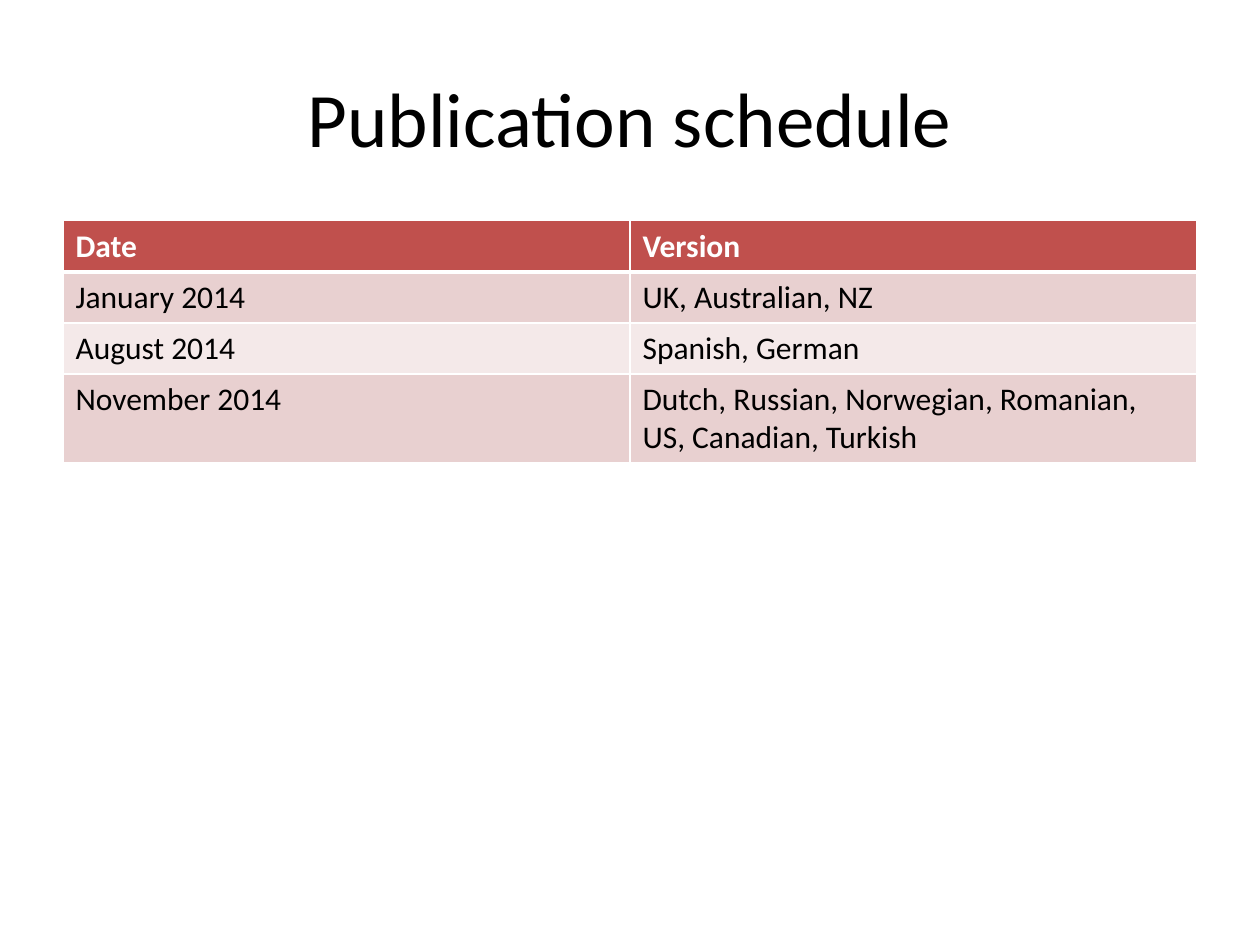
from dataclasses import dataclass

from lxml.etree import SubElement
from pptx import Presentation
from pptx.dml.color import RGBColor
from pptx.enum.text import MSO_ANCHOR, PP_ALIGN
from pptx.oxml.ns import qn
from pptx.util import Cm, Pt


@dataclass(frozen=True)
class Theme:
    """Colours, font and type sizes of the slide."""
    font: str = "Calibri"
    ink: str = "000000"
    paper: str = "FFFFFF"
    head: str = "C0504D"
    bands: tuple = ("E8D0D0", "F4E9E9")
    title: int = 44
    body: int = 18
    thin: int = 1
    thick: int = 3


THEME = Theme()
ROWS = [
    ("Date", "Version"),
    ("January 2014", "UK, Australian, NZ"),
    ("August 2014", "Spanish, German"),
    ("November 2014",
     "Dutch, Russian, Norwegian, Romanian, US, Canadian, Turkish"),
]


def add_run(para, text, size, color, bold=False):
    """Add one styled run to a paragraph."""
    run = para.add_run()
    run.text = text
    font = run.font
    font.name, font.size, font.bold = THEME.font, Pt(size), bold
    font.color.rgb = RGBColor.from_string(color)


def add_title(slide, text, left, top, width, height):
    """Place the centred title in its box."""
    box = slide.shapes.add_textbox(Cm(left), Cm(top), Cm(width), Cm(height))
    frame = box.text_frame
    frame.word_wrap = True
    frame.vertical_anchor = MSO_ANCHOR.MIDDLE
    para = frame.paragraphs[0]
    para.alignment = PP_ALIGN.CENTER
    add_run(para, text, THEME.title, THEME.ink)


def add_edges(cell, top, bottom):
    """Draw the four borders of a cell, with top and bottom in points."""
    props = cell._tc.get_or_add_tcPr()
    sides = {"L": THEME.thin, "R": THEME.thin, "T": top, "B": bottom}
    for side, width in sides.items():
        line = SubElement(props, qn(f"a:ln{side}"), w=str(Pt(width)))
        fill = SubElement(line, qn("a:solidFill"))
        SubElement(fill, qn("a:srgbClr"), val=THEME.paper)


def add_schedule(slide, rows, left, top, width, height):
    """Place the schedule table, with equal columns and rows, in its box."""
    cols = len(rows[0])
    table = slide.shapes.add_table(
        len(rows), cols, Cm(left), Cm(top), Cm(width), Cm(height)).table
    for i, row in enumerate(rows):
        head = i == 0
        fill = THEME.head if head else THEME.bands[(i - 1) % 2]
        color = THEME.paper if head else THEME.ink
        for j, text in enumerate(row):
            cell = table.cell(i, j)
            add_edges(cell, THEME.thick if i == 1 else THEME.thin,
                      THEME.thick if head else THEME.thin)
            cell.fill.solid()
            cell.fill.fore_color.rgb = RGBColor.from_string(fill)
            add_run(cell.text_frame.paragraphs[0], text, THEME.body,
                    color, head)


def main():
    """Build and save the slide."""
    deck = Presentation()
    deck.slide_width, deck.slide_height = Cm(25.4), Cm(19.05)
    slide = deck.slides.add_slide(deck.slide_layouts[6])
    add_title(slide, "Publication schedule", 1.27, 0.76, 22.86, 3.18)
    add_schedule(slide, ROWS, 1.27, 4.45, 22.86, 4.12)
    deck.save("out.pptx")


if __name__ == "__main__":
    main()
